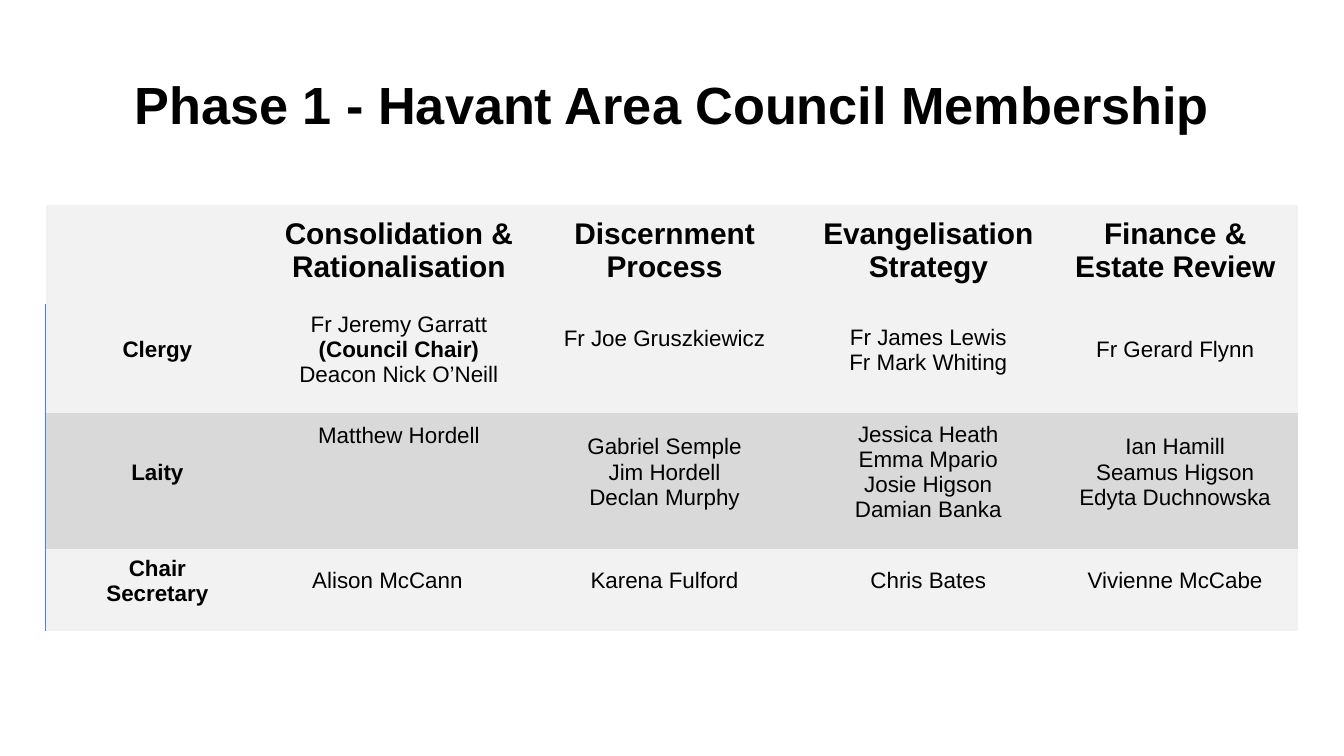
from dataclasses import dataclass
from typing import Optional

import lxml.etree
import pptx
import pptx.dml.color
import pptx.enum.text
import pptx.oxml
import pptx.oxml.ns
import pptx.util

Cm = pptx.util.Cm
Pt = pptx.util.Pt
PP_ALIGN = pptx.enum.text.PP_ALIGN
MSO_ANCHOR = pptx.enum.text.MSO_ANCHOR

FONT = "Arial"
COLORS = {"text": "000000", "light": "F2F2F2", "dark": "D9D9D9", "edge": "4285F4"}
NO_GRID_STYLE = "{2D5ABB26-0587-4C30-8999-92F81FD0307C}"
COLUMN_WIDTHS = (4.3, 4.83, 5.21, 4.76, 4.57)


@dataclass
class Entry:
    lines: tuple[str, ...]
    top: Optional[float] = None
    left: Optional[float] = None
    bold_part: str = ""


@dataclass
class Row:
    height: float
    fill: str
    label: Entry
    entries: tuple[Entry, ...]
    heading: bool = False


ROWS = (
    Row(1.88, "light", Entry(()), (
        Entry(("Consolidation & Rationalisation",)),
        Entry(("Discernment Process",)),
        Entry(("Evangelisation Strategy",)),
        Entry(("Finance & Estate Review",)),
    ), heading=True),
    Row(2.06, "light", Entry(("Clergy",)), (
        Entry(("Fr Jeremy Garratt (Council Chair)", "Deacon Nick O’Neill"),
              bold_part="(Council Chair)"),
        Entry(("Fr Joe Gruszkiewicz",), top=0.41),
        Entry(("Fr James Lewis", "Fr Mark Whiting")),
        Entry(("Fr Gerard Flynn",)),
    )),
    Row(2.56, "dark", Entry(("Laity",)), (
        Entry(("Matthew Hordell",), top=0.18),
        Entry(("Gabriel Semple", "Jim Hordell", "Declan Murphy")),
        Entry(("Jessica Heath", "Emma Mpario", "Josie Higson", "Damian Banka")),
        Entry(("Ian Hamill", "Seamus Higson", "Edyta Duchnowska")),
    )),
    Row(1.55, "light", Entry(("Chair", "Secretary")), (
        Entry(("Alison McCann",), left=0.74),
        Entry(("Karena Fulford",)),
        Entry(("Chris Bates",)),
        Entry(("Vivienne McCabe",)),
    )),
)


def rgb(name: str) -> pptx.dml.color.RGBColor:
    return pptx.dml.color.RGBColor.from_string(COLORS[name])


def style_paragraph(p, size: float, bold: Optional[bool]) -> None:
    p.alignment = PP_ALIGN.CENTER
    p.font.name = FONT
    p.font.size = Pt(size)
    p.font.bold = bold
    p.font.color.rgb = rgb("text")


def add_title(s, text: str) -> None:
    tf = s.shapes.add_textbox(Cm(0.86), Cm(1.24), Cm(23.67), Cm(1.6)).text_frame
    tf.word_wrap = True
    tf.vertical_anchor = MSO_ANCHOR.MIDDLE
    tf.margin_left = tf.margin_right = tf.margin_top = tf.margin_bottom = Cm(0.25)
    p = tf.paragraphs[0]
    p.text = text
    p.line_spacing = 0.9
    style_paragraph(p, 28, True)


def add_left_edge(cell) -> None:
    ln = pptx.oxml.parse_xml(
        f'<a:lnL {pptx.oxml.ns.nsdecls("a")} w="{Pt(1)}"><a:solidFill>'
        f'<a:srgbClr val="{COLORS["edge"]}"/></a:solidFill></a:lnL>'
    )
    cell._tc.get_or_add_tcPr().insert(0, ln)


def fill_cell(cell, entry: Entry, row: Row, bold: bool) -> None:
    cell.fill.solid()
    cell.fill.fore_color.rgb = rgb(row.fill)
    cell.margin_left = Cm(0.18 if entry.left is None else entry.left)
    cell.margin_right = Cm(0.25)
    cell.margin_top = Cm(0.05 if entry.top is None else entry.top)
    cell.margin_bottom = Cm(0.38)
    if row.heading:
        cell.vertical_anchor = MSO_ANCHOR.BOTTOM
    else:
        cell.vertical_anchor = MSO_ANCHOR.MIDDLE if entry.top is None else MSO_ANCHOR.TOP
    tf = cell.text_frame
    for i, line in enumerate(entry.lines):
        p = tf.paragraphs[0] if i == 0 else tf.add_paragraph()
        if entry.bold_part and entry.bold_part in line:
            p.add_run().text = line.replace(entry.bold_part, "")
            r = p.add_run()
            r.text = entry.bold_part
            r.font.bold = True
        else:
            p.text = line
        style_paragraph(p, 16 if row.heading else 12, bold)
        if entry.left is not None:
            p.alignment = PP_ALIGN.LEFT


def add_membership_table(s, rows: tuple[Row, ...]) -> None:
    frame = s.shapes.add_table(
        len(rows), len(COLUMN_WIDTHS), Cm(0.86), Cm(3.87),
        Cm(sum(COLUMN_WIDTHS)), Cm(sum(row.height for row in rows)),
    )
    table = frame.table
    table.first_row = table.horz_banding = False
    table._tbl.tblPr.find(pptx.oxml.ns.qn("a:tableStyleId")).text = NO_GRID_STYLE
    for column, width in zip(table.columns, COLUMN_WIDTHS):
        column.width = Cm(width)
    for i, row in enumerate(rows):
        table.rows[i].height = Cm(row.height)
        for j, entry in enumerate((row.label, *row.entries)):
            fill_cell(table.cell(i, j), entry, row, row.heading or j == 0)
        if not row.heading:
            add_left_edge(table.cell(i, 0))


def main() -> None:
    prs = pptx.Presentation()
    prs.slide_width = Cm(25.4)
    prs.slide_height = Cm(14.29)
    s = prs.slides.add_slide(prs.slide_layouts[6])
    add_title(s, "Phase 1 - Havant Area Council Membership")
    add_membership_table(s, ROWS)
    prs.save("out.pptx")


if __name__ == "__main__":
    main()
